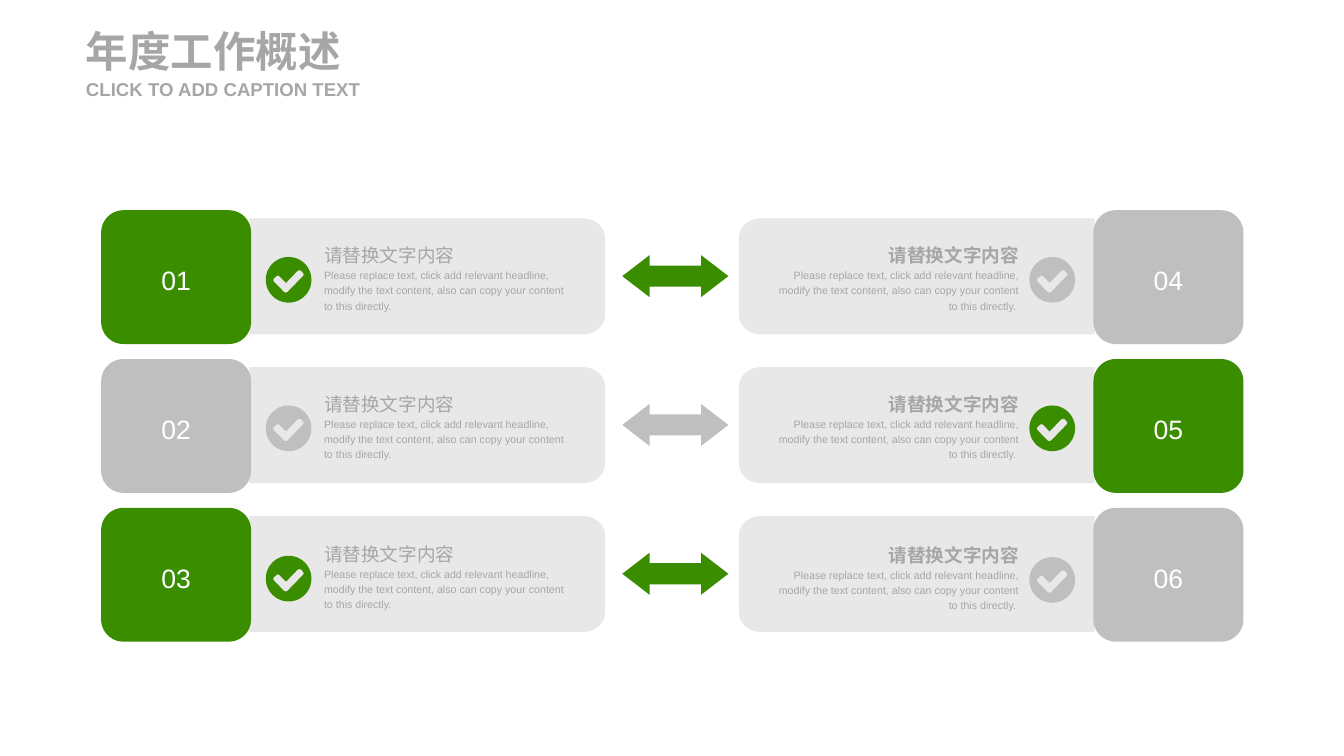
from dataclasses import dataclass
from math import cos, pi, sin

from lxml.etree import SubElement
from pptx import Presentation
from pptx.dml.color import RGBColor
from pptx.enum.shapes import MSO_SHAPE
from pptx.enum.text import MSO_ANCHOR, PP_ALIGN
from pptx.oxml.ns import qn
from pptx.util import Pt

COLORS = {
    "green": "3B8D00",
    "silver": "BFBFBF",
    "panel": "E6E6E6",
    "text": "A6A6A6",
    "white": "FFFFFF",
}
FONT = "Arial"
HEADLINE = "请替换文字内容"
BODY = ("Please replace text, click add relevant headline, modify the text "
        "content, also can copy your content to this directly.")

# Row grid and shared sizes
FIRST_TOP, ROW_STEP = 158.4, 112.1
TILE_WIDTH, TILE_HEIGHT = 113, 100.8
PANEL_WIDTH, PANEL_HEIGHT, PANEL_DROP = 267.8, 87.4, 6.1
CORNER_X, CORNER_Y = 16.6, 14.6
BADGE_RADIUS = 17.2
TICK = [
    (11, -5), (9.5, -6.8), (8, -7.3), (6.6, -6.6), (-2, 2.3), (-7, -2.8),
    (-8, -3.3), (-8.9, -2.9), (-11.2, -0.9), (-11.6, 0.2), (-11.2, 1.3),
    (-3.5, 9.2), (-2.2, 9.7), (-0.8, 9.2), (10.9, -2.9), (11.4, -3.7),
]


@dataclass(frozen=True)
class Side:
    tile_left: float
    panel_inner: float  # straight edge beside the tile
    direction: int  # 1 when the panel extends to the right
    badge_x: float
    text_left: float
    align: PP_ALIGN
    bold: bool
    body: str


@dataclass(frozen=True)
class Card:
    number: str
    side: Side
    row: int
    color: str
    text_top: float
    badge_y: float


LEFT = Side(76.2, 187.9, 1, 217.4, 244.1, PP_ALIGN.LEFT, False, BODY)
RIGHT = Side(823.6, 824.4, -1, 792.6, 581.8, PP_ALIGN.RIGHT, True, BODY + " ")

CARDS = [
    Card("01", LEFT, 0, "green", 180.7, 210.8),
    Card("02", LEFT, 1, "silver", 292.6, 322.7),
    Card("03", LEFT, 2, "green", 405.4, 435.9),
    Card("04", RIGHT, 0, "silver", 180.7, 210.8),
    Card("05", RIGHT, 1, "green", 292.6, 322.7),
    Card("06", RIGHT, 2, "silver", 406.4, 436.9),
]


def paint(shape, color: str) -> None:
    shape.shadow.inherit = False
    shape.fill.solid()
    shape.fill.fore_color.rgb = RGBColor.from_string(COLORS[color])
    shape.line.fill.background()


def style(span, size: float, color: str, bold: bool = False) -> None:
    span.font.name = FONT
    span.font.size = Pt(size)
    span.font.bold = bold
    span.font.color.rgb = RGBColor.from_string(COLORS[color])


def clear_margins(frame) -> None:
    frame.word_wrap = True
    frame.margin_left = frame.margin_right = 0
    frame.margin_top = frame.margin_bottom = 0


def add_outline(page, contours: list[list[tuple[float, float]]], color: str):
    scaled = [[(Pt(x), Pt(y)) for x, y in contour] for contour in contours]
    builder = page.shapes.build_freeform(*scaled[0][0])
    builder.add_line_segments(scaled[0][1:], close=True)
    for contour in scaled[1:]:
        builder.move_to(*contour[0])
        builder.add_line_segments(contour[1:], close=True)
    shape = builder.convert_to_shape()
    paint(shape, color)
    return shape


def arc(x: float, y: float, radius_x: float, radius_y: float,
        start: float, sweep: float, steps: int) -> list[tuple[float, float]]:
    angles = [start + sweep * step / steps for step in range(steps + 1)]
    return [(x + radius_x * cos(a), y + radius_y * sin(a)) for a in angles]


def add_panel(page, card: Card) -> None:
    side = card.side
    top = FIRST_TOP + card.row * ROW_STEP + PANEL_DROP
    bottom = top + PANEL_HEIGHT
    corner_x = side.panel_inner + side.direction * (PANEL_WIDTH - CORNER_X)
    radius_x = side.direction * CORNER_X
    points = [(side.panel_inner, top)]
    points += arc(corner_x, top + CORNER_Y, radius_x, CORNER_Y, -pi / 2, pi / 2, 12)
    points += arc(corner_x, bottom - CORNER_Y, radius_x, CORNER_Y, 0, pi / 2, 12)
    points.append((side.panel_inner, bottom))
    panel = add_outline(page, [points], "panel")
    SubElement(panel.element.find(".//" + qn("a:srgbClr")), qn("a:alpha"), val="90000")


def add_arrow(page, row: int, color: str) -> None:
    top = FIRST_TOP + row * ROW_STEP + 33.8
    arrow = page.shapes.add_shape(
        MSO_SHAPE.LEFT_RIGHT_ARROW, Pt(468.7), Pt(top), Pt(79.9), Pt(31.7))
    arrow.adjustments[0] = 0.5
    arrow.adjustments[1] = 0.65
    paint(arrow, color)


def add_badge(page, card: Card) -> None:
    x, y = card.side.badge_x, card.badge_y
    circle = arc(x, y, BADGE_RADIUS, BADGE_RADIUS, 0, 2 * pi, 72)
    tick = [(x + dx, y + dy) for dx, dy in TICK]
    add_outline(page, [circle, tick], card.color)


def add_description(page, card: Card) -> None:
    box = page.shapes.add_textbox(
        Pt(card.side.text_left), Pt(card.text_top), Pt(185.8), Pt(55.4))
    clear_margins(box.text_frame)
    para = box.text_frame.paragraphs[0]
    para.text = HEADLINE + "\n" + card.side.body
    para.alignment = card.side.align
    para.line_spacing = 1.2
    headline, body = para.runs
    style(headline, 14, "text", card.side.bold)
    style(body, 8, "text")
    # The line break takes the headline size
    line_break = box.element.find(".//" + qn("a:br"))
    SubElement(line_break, qn("a:rPr"), sz="1400")


def add_tile(page, card: Card) -> None:
    tile = page.shapes.add_shape(
        MSO_SHAPE.ROUNDED_RECTANGLE, Pt(card.side.tile_left),
        Pt(FIRST_TOP + card.row * ROW_STEP), Pt(TILE_WIDTH), Pt(TILE_HEIGHT))
    paint(tile, card.color)
    clear_margins(tile.text_frame)
    tile.text_frame.vertical_anchor = MSO_ANCHOR.MIDDLE
    para = tile.text_frame.paragraphs[0]
    para.text = card.number
    para.alignment = PP_ALIGN.CENTER
    para.line_spacing = 1.2
    style(para.runs[0], 20, "white")


def add_heading(page, text: str, top: float, height: float, size: float) -> None:
    box = page.shapes.add_textbox(Pt(64.8), Pt(top), Pt(221), Pt(height))
    clear_margins(box.text_frame)
    box.text_frame.vertical_anchor = MSO_ANCHOR.MIDDLE
    box.text_frame.text = text
    style(box.text_frame.paragraphs[0].runs[0], size, "text", True)


def main() -> None:
    deck = Presentation()
    deck.slide_width, deck.slide_height = Pt(1012.32), Pt(569.52)
    page = deck.slides.add_slide(deck.slide_layouts[6])

    # Panels and arrows
    for card in CARDS:
        add_panel(page, card)
    for row, color in enumerate(["green", "silver", "green"]):
        add_arrow(page, row, color)

    # Card contents and numbered tiles
    for card in CARDS:
        add_description(page, card)
        add_badge(page, card)
    for card in CARDS:
        add_tile(page, card)

    # Title and caption
    add_heading(page, "年度工作概述", 18.7, 38.9, 32)
    add_heading(page, "CLICK TO ADD CAPTION TEXT", 58.3, 17.3, 14)
    deck.save("out.pptx")


if __name__ == "__main__":
    main()
